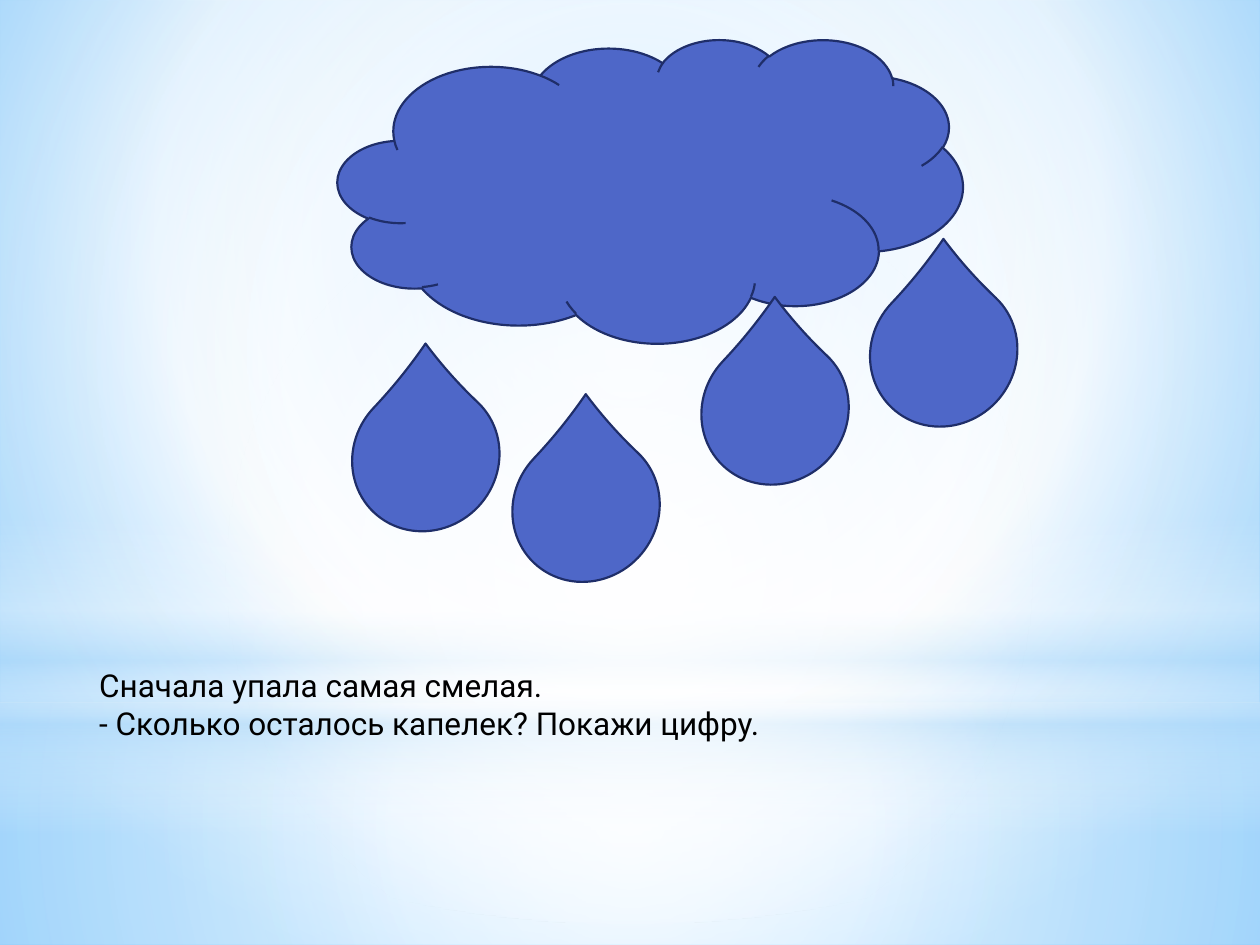
from dataclasses import dataclass

from lxml.etree import SubElement
from pptx import Presentation
from pptx.dml.color import RGBColor
from pptx.enum.shapes import MSO_SHAPE
from pptx.enum.text import MSO_AUTO_SIZE
from pptx.oxml.ns import qn
from pptx.util import Cm, Pt


@dataclass(frozen=True)
class Theme:
    water: str = "4E67C8"
    outline: str = "1F2E69"
    ink: str = "000000"
    white: str = "FFFFFF"
    haze: str = "B4DCFA"
    sky: str = "9ED5FF"
    deep_sky: str = "5BB9FF"
    font: str = "Roboto"
    text_size: float = 18
    outline_width: float = 1.25


THEME = Theme()
WIDTH, HEIGHT = 25.4, 19.05
CENTRE = (50, 50, 50, 50)


def set_gradient(holder, stops, focus=None):
    solid = holder.find(qn("a:solidFill"))
    gradient = holder.makeelement(qn("a:gradFill"), {"rotWithShape": "1"})
    holder.replace(solid, gradient)
    stop_list = SubElement(gradient, qn("a:gsLst"))
    for position, color, opacity in stops:
        stop = SubElement(stop_list, qn("a:gs"), pos=str(position * 1000))
        tint = SubElement(stop, qn("a:srgbClr"), val=color)
        if opacity < 100:
            SubElement(tint, qn("a:alpha"), val=str(opacity * 1000))
    if focus:
        circle = SubElement(gradient, qn("a:path"), path="circle")
        edges = {side: str(value * 1000) for side, value in zip("ltrb", focus)}
        SubElement(circle, qn("a:fillToRect"), **edges)
    else:
        SubElement(gradient, qn("a:lin"), ang="5400000", scaled="0")


def add_filled(slide, preset, left, top, width, height, color):
    figure = slide.shapes.add_shape(preset, Cm(left), Cm(top), Cm(width), Cm(height))
    figure.shadow.inherit = False
    figure.fill.solid()
    figure.fill.fore_color.rgb = RGBColor.from_string(color)
    return figure


def add_backdrop(slide, left, top, width, height):
    slide.background.fill.solid()
    set_gradient(
        slide.background._cSld.bg.bgPr,
        [(0, THEME.sky, 100), (60, THEME.white, 100), (100, THEME.deep_sky, 100)],
        (20, 10, 20, 60),
    )
    white, haze = THEME.white, THEME.haze
    horizon = 14.17
    layers = [
        (MSO_SHAPE.RECTANGLE, horizon, height - horizon,
         [(0, white, 91), (37, white, 76), (100, haze, 79)], CENTRE),
        (MSO_SHAPE.RECTANGLE, 0, horizon,
         [(0, white, 89), (48, white, 62), (100, haze, 79)], CENTRE),
        (MSO_SHAPE.RECTANGLE, 10.46, 6.35,
         [(0, white, 0), (29, white, 30), (45, haze, 40),
          (55, white, 26), (65, haze, 60), (100, white, 0)], None),
        (MSO_SHAPE.OVAL, 4.45, horizon,
         [(0, white, 100), (56, white, 0)], CENTRE),
    ]
    for preset, offset, depth, stops, focus in layers:
        layer = add_filled(slide, preset, left, top + offset, width, depth, white)
        layer.line.fill.background()
        set_gradient(layer._element.spPr, stops, focus)


def add_water(slide, preset, left, top, width, height):
    water = add_filled(slide, preset, left, top, width, height, THEME.water)
    water.line.color.rgb = RGBColor.from_string(THEME.outline)
    water.line.width = Pt(THEME.outline_width)
    return water


def add_rain_cloud(slide, left, top, width, height):
    add_water(slide, MSO_SHAPE.CLOUD, left, top, width, height)
    for across, down in [(0.25, 6.98), (3.48, 8), (7.29, 6.04), (10.69, 4.87)]:
        drop = add_water(slide, MSO_SHAPE.TEAR, left + across, top + down, 3.05, 2.9)
        drop.adjustments[0] = 1.09
        drop.rotation = 313.4


def add_question(slide, left, top, width, height):
    question = slide.shapes.add_textbox(Cm(left), Cm(top), Cm(width), Cm(height))
    frame = question.text_frame
    frame.word_wrap = True
    frame.auto_size = MSO_AUTO_SIZE.SHAPE_TO_FIT_TEXT
    sentences = [
        "Сначала упала самая смелая.",
        "- Сколько осталось капелек? Покажи цифру.",
    ]
    for index, sentence in enumerate(sentences):
        paragraph = frame.add_paragraph() if index else frame.paragraphs[0]
        run = paragraph.add_run()
        run.text = sentence
        run.font.name = THEME.font
        run.font.size = Pt(THEME.text_size)
        run.font.color.rgb = RGBColor.from_string(THEME.ink)


def main():
    deck = Presentation()
    deck.slide_width, deck.slide_height = Cm(WIDTH), Cm(HEIGHT)
    slide = deck.slides.add_slide(deck.slide_layouts[6])
    add_backdrop(slide, 0, 0, WIDTH, HEIGHT)
    add_question(slide, 1.75, 13.31, 22.61, 1.8)
    add_rain_cloud(slide, 6.81, 0.79, 12.6, 6.12)
    deck.save("out.pptx")


if __name__ == "__main__":
    main()
